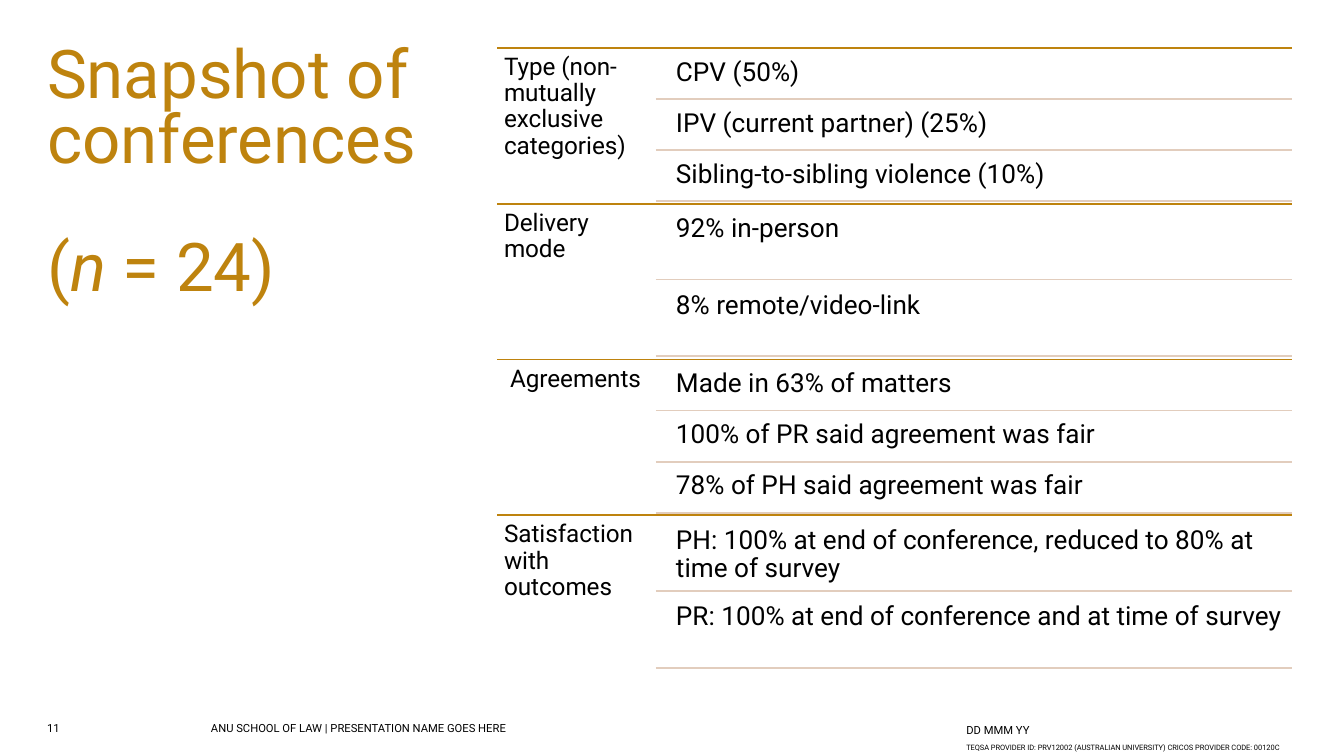
from lxml import etree
from pptx import Presentation
from pptx import util as u
from pptx.dml.color import RGBColor
from pptx.enum import shapes, text
from pptx.oxml.ns import qn

PX = u.Inches(1) // 200
GOLD, SAND, BLACK = "BE830E", "E2CDBD", "000000"

LEFT, TOP, RIGHT = 740, 71, 1922
TOPIC_WIDTH, BAND_HEIGHT = 236, 232
FINDING_LEFT = 994
GAP_RATIO = 0.05

# topic, extra indent of the topic, findings
BANDS = [
    ("Type (non-mutually exclusive categories)", 0,
     ["CPV (50%)", "IPV (current partner) (25%)", "Sibling-to-sibling violence (10%)"]),
    ("Delivery mode", 0, ["92% in-person", "8% remote/video-link"]),
    ("Agreements", 9,
     ["Made in 63% of matters", "100% of PR said agreement was fair",
      "78% of PH said agreement was fair"]),
    ("Satisfaction with outcomes", 0,
     ["PH: 100% at end of conference, reduced to 80% at time of survey",
      "PR: 100% at end of conference and at time of survey"]),
]


def color(value):
    return RGBColor.from_string(value)


def add_run(paragraph, words, size=14, fill=BLACK, italic=False):
    run = paragraph.add_run()
    run.text = words
    run.font.name = "Roboto"
    run.font.size = u.Pt(size)
    run.font.italic = italic
    run.font.color.rgb = color(fill)


class Canvas:
    def __init__(self, slide):
        self.slide = slide

    def box(self, left, top, width, height, inset=0, indent=0):
        """Add an empty wrapping text box and return its text frame."""
        frame = self.slide.shapes.add_textbox(
            left * PX, top * PX, width * PX, height * PX).text_frame
        frame.word_wrap = True
        frame.margin_left = (inset + indent) * PX
        frame.margin_top = frame.margin_right = frame.margin_bottom = inset * PX
        return frame

    def label(self, words, left, top, width, height, inset=0, indent=0,
              spacing=1.0, middle=False, **style):
        frame = self.box(left, top, width, height, inset, indent)
        if middle:
            frame.vertical_anchor = text.MSO_ANCHOR.MIDDLE
        frame.paragraphs[0].line_spacing = spacing
        add_run(frame.paragraphs[0], words, **style)

    def rule(self, left, right, y, fill):
        line = self.slide.shapes.add_connector(
            shapes.MSO_CONNECTOR.STRAIGHT, left * PX, y * PX, right * PX, y * PX)
        line.line.color.rgb = color(fill)
        line.line.width = u.Pt(1)
        etree.SubElement(line._element.spPr, qn("a:effectLst"))

    def title(self):
        frame = self.box(70, 70, 630, 688)
        heading = frame.paragraphs[0]
        sample = frame.add_paragraph()
        sample.space_before = u.Pt(34)
        heading.line_spacing = sample.line_spacing = 0.8
        add_run(heading, "Snapshot of conferences", 36, GOLD)
        for words, italic in [("(", False), ("n", True), (" = 24)", False)]:
            add_run(sample, words, 36, GOLD, italic)

    def band(self, top, topic, indent, findings):
        """Draw one topic with its findings, spread evenly over the band."""
        count = len(findings)
        height = BAND_HEIGHT / (count + GAP_RATIO * (count + 1))
        gap = height * GAP_RATIO
        self.rule(LEFT, RIGHT, top, GOLD)
        self.label(topic, LEFT, top, TOPIC_WIDTH, BAND_HEIGHT, inset=10,
                   indent=indent, spacing=0.9, size=13)
        for row, finding in enumerate(findings):
            bottom = round(top + (row + 1) * (height + gap))
            self.label(finding, FINDING_LEFT, bottom - round(height),
                       RIGHT - FINDING_LEFT, round(height), inset=12, spacing=0.9)
            self.rule(LEFT + TOPIC_WIDTH, RIGHT, bottom, SAND)


def main():
    deck = Presentation()
    deck.slide_width, deck.slide_height = 2000 * PX, 1125 * PX
    canvas = Canvas(deck.slides.add_slide(deck.slide_layouts[6]))

    canvas.title()
    for number, band in enumerate(BANDS):
        canvas.band(TOP + number * BAND_HEIGHT, *band)

    canvas.label("11", 70, 1074, 78, 24, size=6)
    canvas.label("ANU SCHOOL OF LAW | PRESENTATION NAME GOES HERE",
                 314, 1074, 1100, 24, size=6)
    canvas.label("DD MMM YY", 1438, 1074, 158, 24, middle=True, size=6)
    canvas.label("TEQSA PROVIDER ID: PRV12002 (AUSTRALIAN UNIVERSITY) "
                 "CRICOS PROVIDER CODE: 00120C", 1438, 1106, 560, 19, size=4)
    deck.save("out.pptx")


if __name__ == "__main__":
    main()
